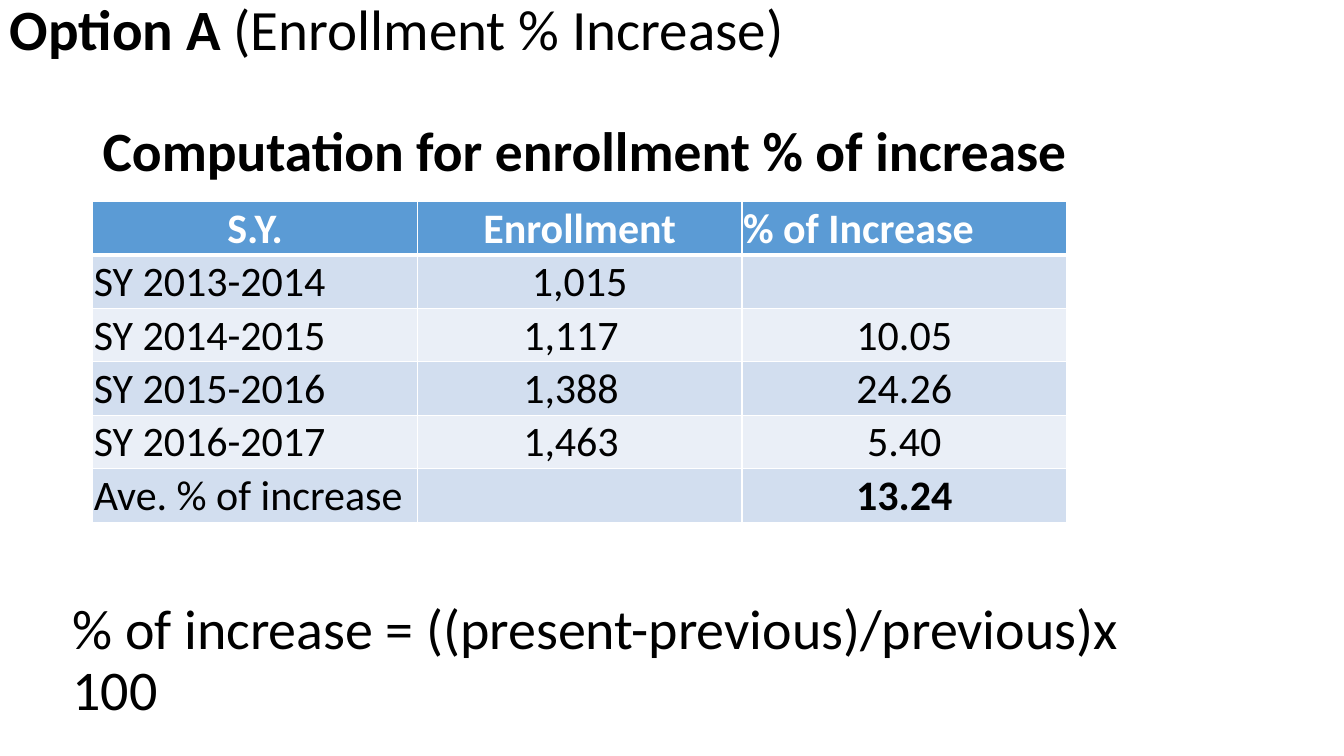
from lxml import etree
from pptx import Presentation
from pptx import util as u
from pptx.dml.color import RGBColor
from pptx.enum import text
from pptx.oxml.ns import qn

COLORS = {
    "ink": "000000",
    "white": "FFFFFF",
    "header": "5B9BD5",
    "odd_row": "D2DEEF",
    "even_row": "EAEFF7",
}
LEFT, CENTER = text.PP_ALIGN.LEFT, text.PP_ALIGN.CENTER


class SlideBuilder:
    """Holds the style and the current slide."""

    font_name = "Calibri"
    cell_size = 30
    cell_margin = 0.01

    def __init__(self, slide):
        self.slide = slide

    def style(self, font, size, color="ink", bold=False):
        font.name = self.font_name
        font.size = u.Pt(size)
        font.bold = bold
        font.color.rgb = RGBColor.from_string(COLORS[color])

    def text_box(self, box, runs, size, spacing=0.9):
        """Add one paragraph made of (words, bold) runs."""
        shape = self.slide.shapes.add_textbox(*map(u.Inches, box))
        frame = shape.text_frame
        frame.word_wrap = True
        frame.vertical_anchor = text.MSO_ANCHOR.MIDDLE
        paragraph = frame.paragraphs[0]
        paragraph.line_spacing = spacing
        self.style(paragraph.font, size, bold=runs[0][1])
        for words, bold in runs:
            run = paragraph.add_run()
            run.text = words
            if bold != runs[0][1]:
                run.font.bold = bold

    def borders(self, cell, bottom):
        properties = cell._tc.get_or_add_tcPr()
        widths = {"a:lnL": 1, "a:lnR": 1, "a:lnT": 1, "a:lnB": bottom}
        for position, (tag, width) in enumerate(widths.items()):
            line = etree.Element(qn(tag), w=str(u.Pt(width)))
            fill = etree.SubElement(line, qn("a:solidFill"))
            etree.SubElement(fill, qn("a:srgbClr"), val=COLORS["white"])
            properties.insert(position, line)

    def cell(self, cell, words, fill, color, bold, align, indent, bottom):
        cell.fill.solid()
        cell.fill.fore_color.rgb = RGBColor.from_string(COLORS[fill])
        cell.vertical_anchor = text.MSO_ANCHOR.MIDDLE
        cell.margin_left = u.Inches(self.cell_margin + indent)
        cell.margin_right = cell.margin_top = u.Inches(self.cell_margin)
        cell.margin_bottom = 0
        self.borders(cell, bottom)
        cell.text = words
        paragraph = cell.text_frame.paragraphs[0]
        paragraph.alignment = align
        self.style(paragraph.font, self.cell_size, color, bold)

    def table(self, left, top, column_width, row_height, rows, layout):
        """Add a banded table; layout(row, column) gives align, indent, bold."""
        count = len(rows[0])
        table = self.slide.shapes.add_table(
            len(rows), count, u.Inches(left), u.Inches(top),
            u.Inches(column_width * count), u.Inches(row_height * len(rows)),
        ).table
        for column in table.columns:
            column.width = u.Inches(column_width)
        for r, row in enumerate(rows):
            table.rows[r].height = u.Inches(row_height)
            band = "odd_row" if r % 2 else "even_row"
            for c, words in enumerate(row):
                align, indent, bold = layout(r, c)
                self.cell(table.cell(r, c), words,
                          fill=band if r else "header",
                          color="ink" if r else "white",
                          bold=bold, align=align, indent=indent,
                          bottom=1 if r else 3)


ENROLLMENT = [
    ("S.Y.", "Enrollment", "% of Increase"),
    ("SY 2013-2014", "1,015", ""),
    ("SY 2014-2015", "1,117", "10.05"),
    ("SY 2015-2016", "1,388", "24.26"),
    ("SY 2016-2017", "1,463", "5.40"),
    ("Ave. % of increase", "", "13.24"),
]


def enrollment_layout(row, column):
    last_row = len(ENROLLMENT) - 1
    bold = row == 0 or (row == last_row and column == 2)
    if column == 1 and 2 <= row < last_row:
        return LEFT, 1.04, bold
    left_column = 2 if row == 0 else 0
    return (LEFT if column == left_column else CENTER), 0, bold


def main():
    presentation = Presentation()
    presentation.slide_width = u.Inches(13.33)
    presentation.slide_height = u.Inches(7.5)
    builder = SlideBuilder(
        presentation.slides.add_slide(presentation.slide_layouts[6]))

    # Table heading
    builder.text_box((0.92, 1.17, 11.5, 0.7),
                     [("Computation for enrollment % of increase", True)], 39.6)

    # Enrollment table
    builder.table(0.92, 2, 3.22, 0.53, ENROLLMENT, enrollment_layout)

    # Formula
    builder.text_box((0.62, 5.84, 11.5, 1.45),
                     [("% of increase = ((present-previous)/previous)x 100", False)],
                     40)

    # Option label
    builder.text_box((0, 0, 8.3, 0.68),
                     [("Option A ", True), ("(Enrollment % Increase)", False)],
                     40.7, spacing=0.8)

    presentation.save("out.pptx")


if __name__ == "__main__":
    main()
